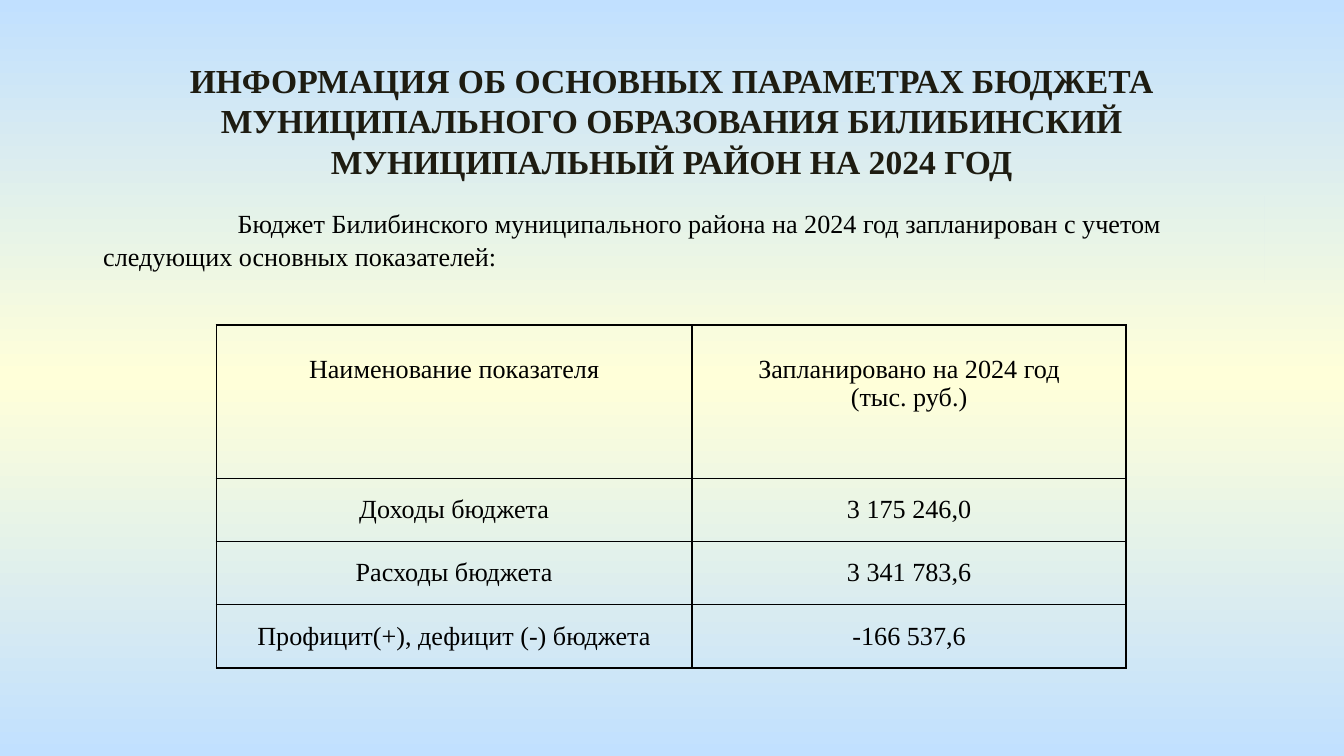
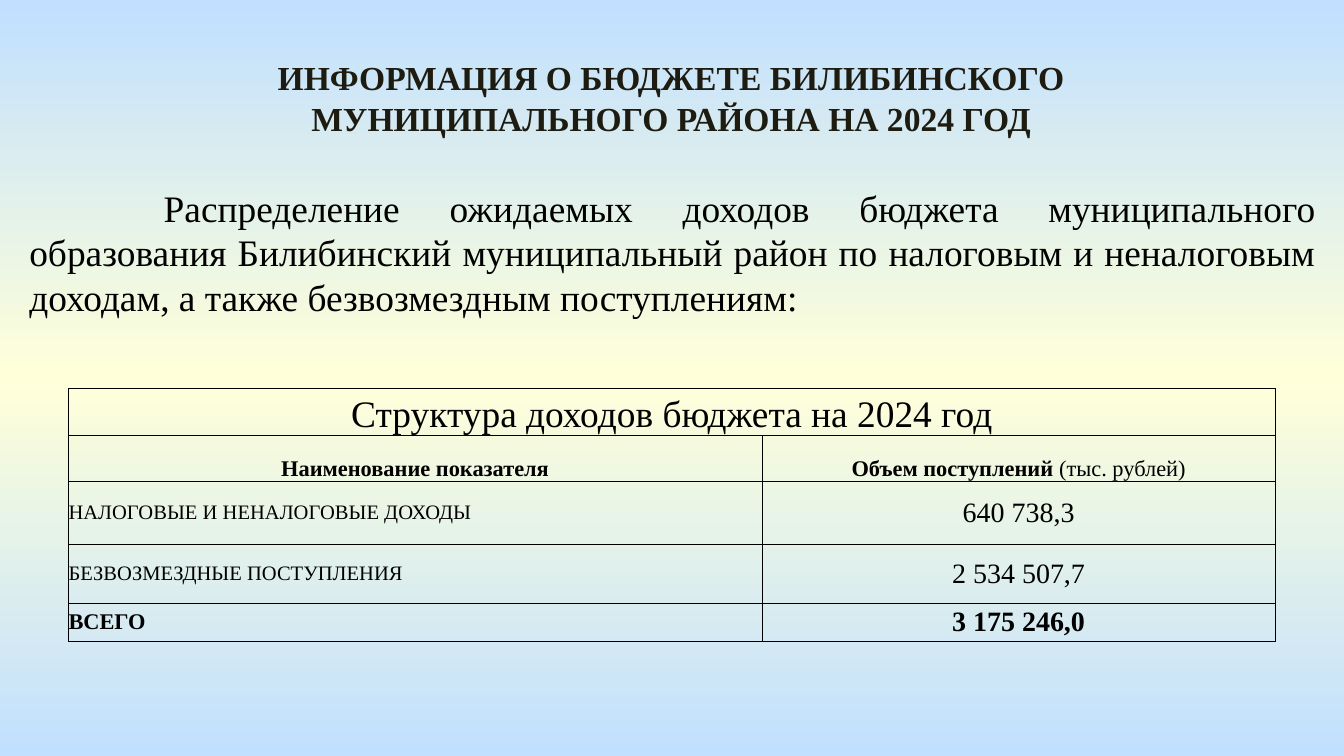
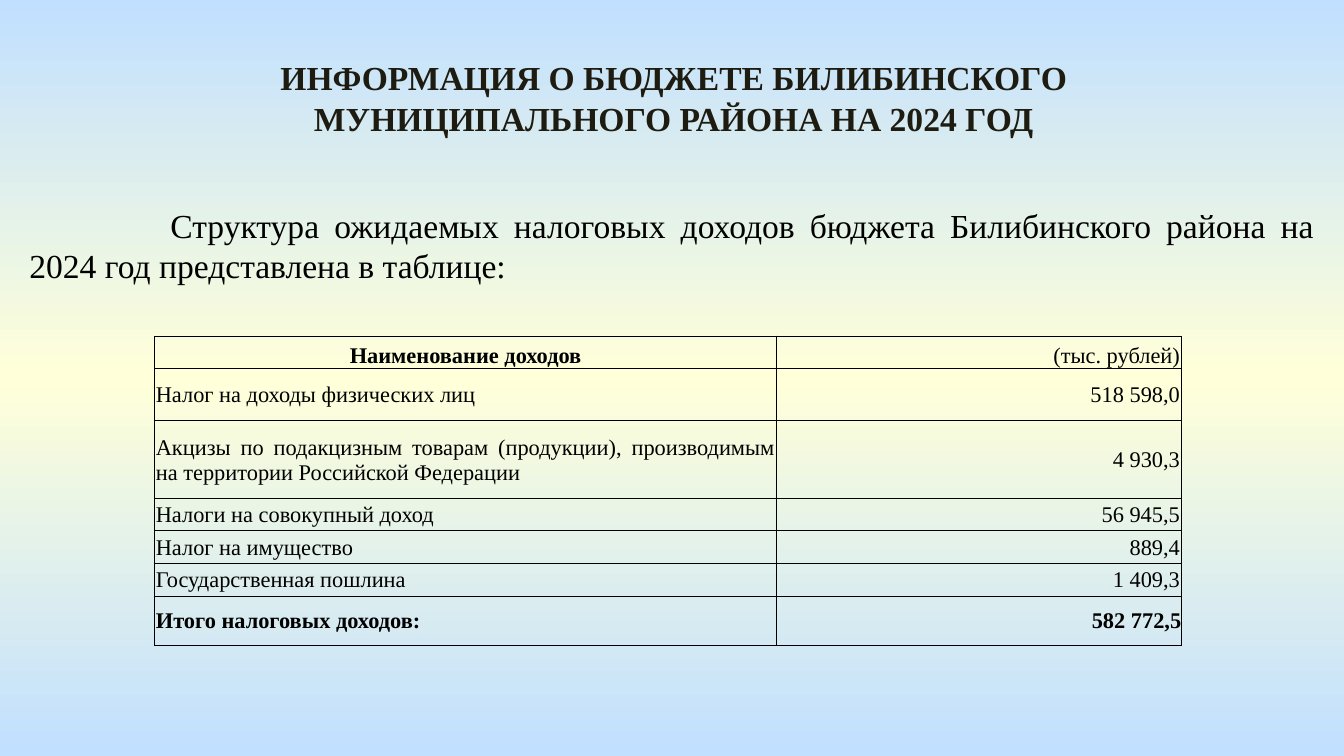
from dataclasses import dataclass
from functools import partial

from lxml.etree import SubElement
from pptx import Presentation
from pptx.dml.color import RGBColor
from pptx.enum.shapes import MSO_SHAPE
from pptx.enum.text import MSO_ANCHOR, PP_ALIGN
from pptx.oxml import parse_xml
from pptx.oxml.ns import nsdecls, qn
from pptx.util import Inches, Pt


@dataclass(frozen=True)
class Theme:
    font: str = "Times New Roman"
    title_color: str = "1E1C11"
    text_color: str = "000000"
    gradient: tuple = ((0, "C1E0FF"), (50, "FFFFD9"), (100, "C1E0FF"))
    title_size: int = 18
    large: int = 20
    medium: int = 18
    value: int = 15
    body: int = 14
    small: int = 12
    caption: int = 11


@dataclass(frozen=True)
class Cell:
    lines: tuple
    size: int
    align: PP_ALIGN = PP_ALIGN.CENTER
    bold: bool = False
    anchor: MSO_ANCHOR = MSO_ANCHOR.MIDDLE
    side: float = 0
    top: float = 0


THEME = Theme()
LEFT, CENTER, RIGHT, JUSTIFY = (
    PP_ALIGN.LEFT, PP_ALIGN.CENTER, PP_ALIGN.RIGHT, PP_ALIGN.JUSTIFY)
BUDGET_TITLE = "ИНФОРМАЦИЯ О БЮДЖЕТЕ БИЛИБИНСКОГО МУНИЦИПАЛЬНОГО РАЙОНА НА 2024 ГОД"


def set_background(master):
    fill = master.background.fill
    fill.gradient()
    fill.gradient_angle = 270
    stops = master._element.find(".//" + qn("a:gsLst"))
    for stop in list(stops):
        stops.remove(stop)
    for position, color in THEME.gradient:
        stop = SubElement(stops, qn("a:gs"), pos=str(position * 1000))
        SubElement(stop, qn("a:srgbClr"), val=color)


def add_run(p, text, size, bold=False, color=THEME.text_color):
    r = p.add_run()
    r.text = text
    r.font.name = THEME.font
    r.font.size = Pt(size)
    r.font.bold = bold
    r.font.color.rgb = RGBColor.from_string(color)


def write_block(sp, text, size, align, bold=False, color=THEME.text_color):
    tf = sp.text_frame
    tf.word_wrap = True
    tf.vertical_anchor = MSO_ANCHOR.MIDDLE
    p = tf.paragraphs[0]
    p.alignment = align
    add_run(p, text, size, bold, color)
    return p


def add_title(s, text, left, top, width, height):
    sp = s.shapes.add_textbox(Inches(left), Inches(top), Inches(width), Inches(height))
    write_block(sp, text, THEME.title_size, CENTER, True, THEME.title_color)


def add_intro(s, text, box, size, align=JUSTIFY, spacing=1, indent=1, filled=True):
    place = [Inches(v) for v in box]
    if filled:
        sp = s.shapes.add_shape(MSO_SHAPE.RECTANGLE, *place)
        sp.shadow.inherit = False
        sp.line.fill.background()
        sp._element.remove(sp._element.find(qn("p:style")))
        sp._element.set("useBgFill", "1")
    else:
        sp = s.shapes.add_textbox(*place)
    p = write_block(sp, text, size, align)
    p.line_spacing = spacing
    p._p.get_or_add_pPr().set("indent", str(Inches(indent)))


def set_borders(cell, width):
    tc_pr = cell._tc.get_or_add_tcPr()
    for i, side in enumerate(("lnL", "lnR", "lnT", "lnB")):
        tc_pr.insert(i, parse_xml(
            f'<a:{side} {nsdecls("a")} w="{Pt(width)}"><a:solidFill>'
            f'<a:srgbClr val="{THEME.text_color}"/></a:solidFill></a:{side}>'))


def fill_cell(cell, content):
    cell.vertical_anchor = content.anchor
    cell.margin_left = cell.margin_right = Inches(content.side)
    cell.margin_top, cell.margin_bottom = Inches(content.top), 0
    tf = cell.text_frame
    for i, line in enumerate(content.lines):
        p = tf.add_paragraph() if i else tf.paragraphs[0]
        p.alignment = content.align
        for text, bold in line:
            add_run(p, text, content.size, bold)


def make_cell(*lines, **style):
    bold = style.get("bold", False)
    runs = tuple(((line, bold),) if isinstance(line, str) else line for line in lines)
    return Cell(runs, **style)


def add_grid(s, left, top, widths, heights, rows, border):
    frame = s.shapes.add_table(
        len(heights), len(widths), Inches(left), Inches(top),
        Inches(sum(widths)), Inches(sum(heights)))
    table = frame.table
    table.first_row = table.horz_banding = False
    for column, width in zip(table.columns, widths):
        column.width = Inches(width)
    for row, height in zip(table.rows, heights):
        row.height = Inches(height)
    for i, contents in enumerate(rows):
        for j in range(len(widths)):
            cell = table.cell(i, j)
            cell.fill.background()
            set_borders(cell, border)
            if j < len(contents):
                fill_cell(cell, contents[j])
        if len(contents) < len(widths):
            table.cell(i, 0).merge(table.cell(i, len(widths) - 1))


def build_parameters(s):
    add_intro(
        s, "Бюджет Билибинского муниципального района на 2024 год запланирован "
        "с учетом следующих основных показателей:",
        (0.67, 1.46, 8.74, 0.64), THEME.body, LEFT, 1.05)
    add_title(
        s, "ИНФОРМАЦИЯ ОБ ОСНОВНЫХ ПАРАМЕТРАХ БЮДЖЕТА МУНИЦИПАЛЬНОГО ОБРАЗОВАНИЯ "
        "БИЛИБИНСКИЙ МУНИЦИПАЛЬНЫЙ РАЙОН НА 2024 ГОД", 0.35, 0.39, 9.3, 1.01)
    head = partial(make_cell, size=THEME.body, anchor=MSO_ANCHOR.TOP, side=0.07, top=0.22)
    name = partial(make_cell, size=THEME.body, side=0.07)
    amount = partial(make_cell, size=THEME.body)
    figures = (
        ("Доходы бюджета", "3 175 246,0"),
        ("Расходы бюджета", "3 341 783,6"),
        ("Профицит(+), дефицит (-) бюджета", "-166 537,6"),
    )
    rows = [(head("Наименование показателя"),
             head("Запланировано на 2024 год", "(тыс. руб.)"))]
    rows += [(name(label), amount(total)) for label, total in figures]
    add_grid(s, 1.61, 2.42, (3.54, 3.23), (1.14, 0.47, 0.47, 0.47), rows, 1)


def build_revenue(s):
    add_intro(
        s, "Распределение ожидаемых доходов бюджета муниципального образования "
        "Билибинский муниципальный район по налоговым и неналоговым доходам, "
        "а также безвозмездным поступлениям:", (0.12, 1.32, 9.77, 1.11), THEME.large)
    add_title(s, BUDGET_TITLE, 1.13, 0.37, 7.73, 0.71)
    head = partial(make_cell, anchor=MSO_ANCHOR.BOTTOM)
    name = partial(make_cell, align=LEFT)
    amount = partial(make_cell, size=THEME.value)
    rows = [
        (head("Структура доходов бюджета на 2024 год", size=THEME.large),),
        (head("Наименование показателя", size=THEME.small, bold=True),
         head((("Объем поступлений ", True), ("(тыс. рублей)", False)),
              size=THEME.small, side=0.07)),
        (name("НАЛОГОВЫЕ И НЕНАЛОГОВЫЕ ДОХОДЫ", size=THEME.caption), amount("640 738,3")),
        (name("БЕЗВОЗМЕЗДНЫЕ ПОСТУПЛЕНИЯ", size=THEME.caption), amount("2 534 507,7")),
        (name("ВСЕГО", size=THEME.small, bold=True), amount("3 175 246,0", bold=True)),
    ]
    add_grid(s, 0.51, 2.89, (5.16, 3.82), (0.35, 0.34, 0.47, 0.44, 0.28), rows, 0.5)


def build_taxes(s):
    add_title(s, BUDGET_TITLE, 1.15, 0.37, 7.73, 0.71)
    add_intro(
        s, "Структура ожидаемых налоговых доходов бюджета Билибинского района "
        "на 2024 год представлена в таблице:",
        (0.12, 1.47, 9.76, 0.71), THEME.medium, indent=1.05, filled=False)
    text = partial(make_cell, size=THEME.small, side=0.01, top=0.01)
    taxes = (
        ("Налог на доходы физических лиц", "518 598,0"),
        ("Акцизы по подакцизным товарам (продукции), производимым на территории "
         "Российской Федерации", "4 930,3"),
        ("Налоги на совокупный доход", "56 945,5"),
        ("Налог на имущество", "889,4"),
        ("Государственная пошлина", "1 409,3"),
    )
    rows = [(text("Наименование доходов", bold=True, anchor=MSO_ANCHOR.BOTTOM),
             text("(тыс. рублей)", align=RIGHT, anchor=MSO_ANCHOR.BOTTOM))]
    rows += [(text(label, align=JUSTIFY), text(total, align=RIGHT))
             for label, total in taxes]
    rows.append((text("Итого налоговых доходов:", align=JUSTIFY, bold=True),
                 make_cell("582 772,5", size=THEME.small, align=RIGHT, bold=True)))
    add_grid(s, 1.15, 2.5, (4.63, 3.01),
             (0.24, 0.39, 0.58, 0.24, 0.24, 0.25, 0.36), rows, 0.5)


def main():
    prs = Presentation()
    prs.slide_width, prs.slide_height = Inches(10), Inches(10 * 9 / 16)
    set_background(prs.slide_master)
    for build in (build_parameters, build_revenue, build_taxes):
        build(prs.slides.add_slide(prs.slide_layouts[6]))
    prs.save("out.pptx")


if __name__ == "__main__":
    main()
